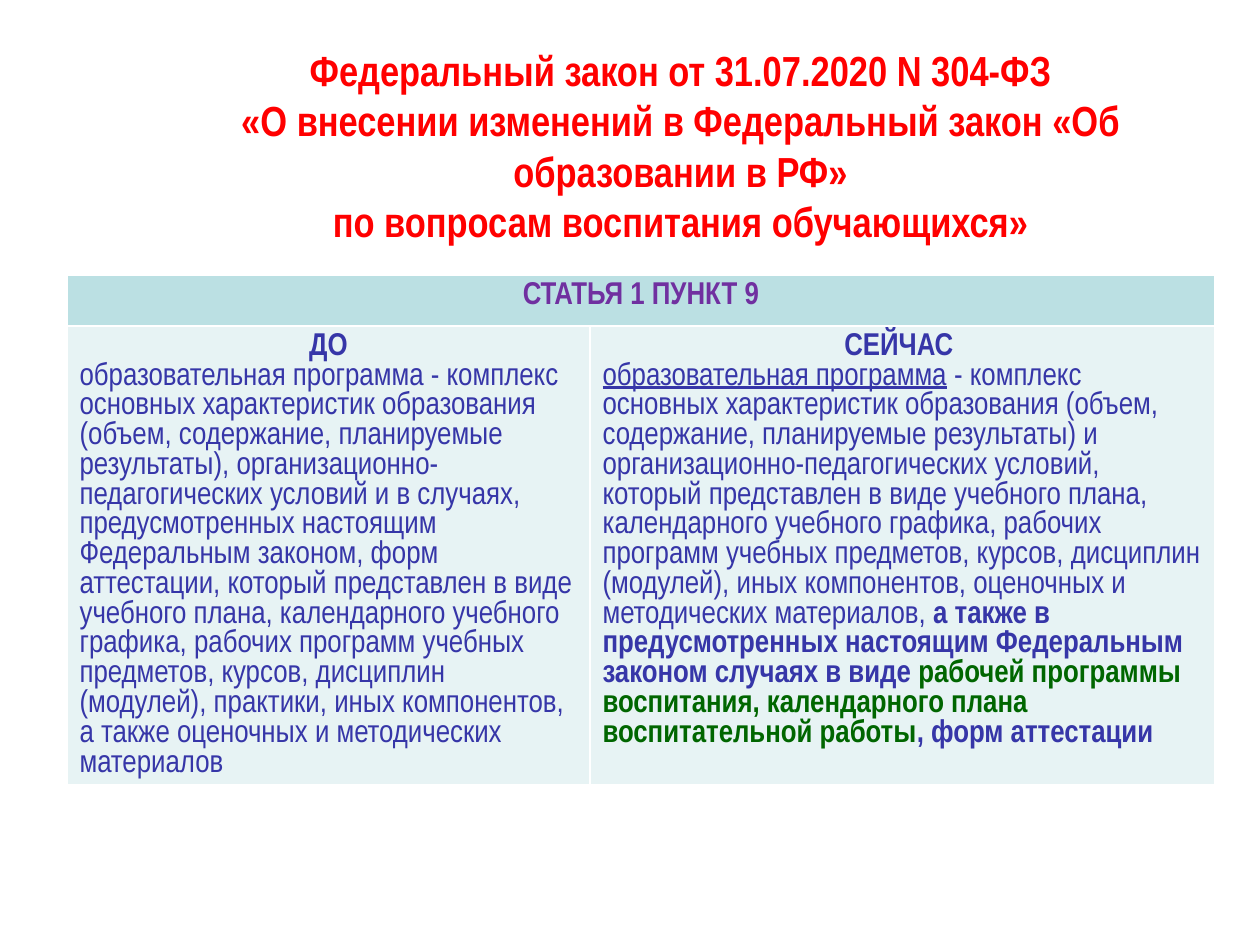
from pptx import Presentation
from pptx.dml.color import RGBColor
from pptx.enum.text import MSO_ANCHOR, MSO_AUTO_SIZE, PP_ALIGN
from pptx.util import Pt

CENTER, LEFT = PP_ALIGN.CENTER, PP_ALIGN.LEFT
PX = 914400 // 126

THEME = {
    "font": "Arial Narrow",
    "title_size": 24, "table_size": 18, "table_leading": 17,
    "title": "FF0000", "header": "7030A0", "text": "3636A8", "accent": "006600",
    "header_fill": "BBE0E3", "body_fill": "E7F3F4",
}

TITLE = ("Федеральный закон от 31.07.2020 N 304-ФЗ\v"
         "«О внесении изменений в Федеральный закон «Об образовании в РФ»\v"
         "по вопросам воспитания обучающихся»")
ARTICLE = [(CENTER, [("СТАТЬЯ 1 ПУНКТ 9", "header", True, False)])]
BEFORE = [
    (CENTER, [("ДО", "text", True, False)]),
    (LEFT, [("образовательная программа - комплекс основных характеристик образования "
             "(объем, содержание, планируемые результаты), организационно-педагогических "
             "условий и в случаях, предусмотренных настоящим Федеральным законом, форм "
             "аттестации, который представлен в виде учебного плана, календарного учебного "
             "графика, рабочих программ учебных предметов, курсов, дисциплин (модулей), "
             "практики, иных компонентов, а также оценочных и методических материалов",
             "text", False, False)]),
]
NOW = [
    (CENTER, [("СЕЙЧАС ", "text", True, False)]),
    (LEFT, [
        ("образовательная программа", "text", False, True),
        (" - комплекс основных характеристик образования (объем, содержание, планируемые "
         "результаты) и организационно-педагогических условий, который представлен в виде "
         "учебного плана, календарного учебного графика, рабочих программ учебных предметов, "
         "курсов, дисциплин (модулей), иных компонентов, оценочных и методических материалов, ",
         "text", False, False),
        ("а также в предусмотренных настоящим Федеральным законом случаях в виде ",
         "text", True, False),
        ("рабочей программы воспитания, календарного плана воспитательной работы",
         "accent", True, False),
        (", форм аттестации", "text", True, False),
    ]),
]

TITLE_BOX = (164, 38, 1033, 158)
TABLE_ORIGIN = (67, 275)
COLUMNS = (523, 625)
ROWS = (51, 456)


def style(font, size, color, bold, underline=False):
    font.name = THEME["font"]
    font.size = Pt(THEME[size])
    font.color.rgb = RGBColor.from_string(THEME[color])
    font.bold = bold
    font.underline = underline


def fill_cell(cell, paragraphs, fill):
    cell.fill.solid()
    cell.fill.fore_color.rgb = RGBColor.from_string(THEME[fill])
    frame = cell.text_frame
    for index, (alignment, pieces) in enumerate(paragraphs):
        paragraph = frame.add_paragraph() if index else frame.paragraphs[0]
        paragraph.alignment = alignment
        paragraph.line_spacing = Pt(THEME["table_leading"])
        for text, color, bold, underline in pieces:
            run = paragraph.add_run()
            run.text = text
            style(run.font, "table_size", color, bold, underline)


def add_title(slide):
    title = slide.shapes.title
    title.left, title.top, title.width, title.height = (v * PX for v in TITLE_BOX)
    frame = title.text_frame
    frame.text = TITLE
    frame.word_wrap = True
    frame.auto_size = MSO_AUTO_SIZE.NONE
    frame.vertical_anchor = MSO_ANCHOR.TOP
    heading = frame.paragraphs[0]
    heading.alignment = CENTER
    for run in heading.runs:
        style(run.font, "title_size", "title", True)


def add_comparison(slide):
    left, top = TABLE_ORIGIN
    comparison = slide.shapes.add_table(
        len(ROWS), len(COLUMNS), left * PX, top * PX,
        sum(COLUMNS) * PX, sum(ROWS) * PX).table
    for column, width in zip(comparison.columns, COLUMNS):
        column.width = width * PX
    for row, height in zip(comparison.rows, ROWS):
        row.height = height * PX
    comparison.cell(0, 0).merge(comparison.cell(0, 1))
    fill_cell(comparison.cell(0, 0), ARTICLE, "header_fill")
    for column, wording in enumerate((BEFORE, NOW)):
        fill_cell(comparison.cell(1, column), wording, "body_fill")


def main():
    deck = Presentation()
    deck.slide_width, deck.slide_height = 1260 * PX, 945 * PX
    slide = deck.slides.add_slide(deck.slide_layouts[5])
    add_title(slide)
    add_comparison(slide)
    deck.save("out.pptx")


if __name__ == "__main__":
    main()
